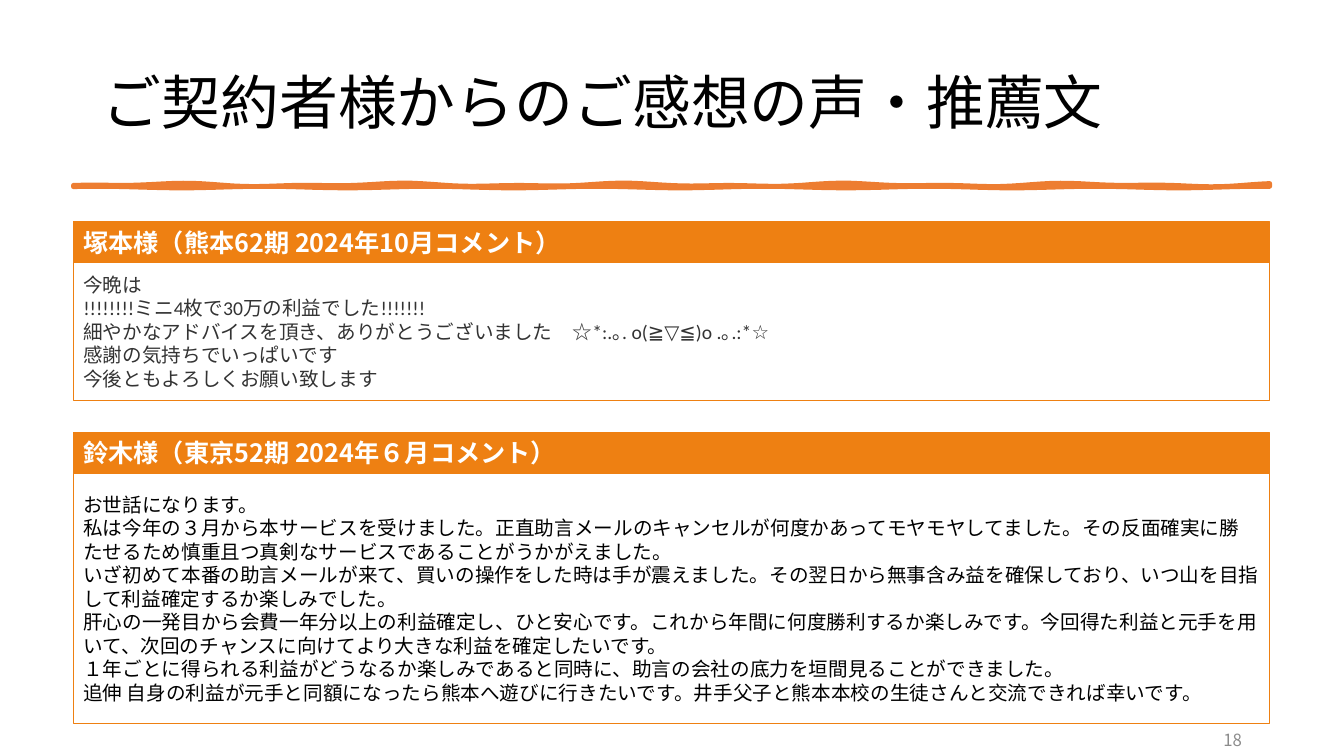
"""Build the slide of client comments and recommendations."""
import math

import pptx
import pptx.dml.color
import pptx.enum.shapes
import pptx.enum.text
import pptx.oxml
import pptx.oxml.ns
import pptx.util

Cm = pptx.util.Cm
Align = pptx.enum.text.PP_ALIGN
COLOURS = {"orange": "EE8012", "rule": "ED7D31", "black": "000000",
           "grey": "333333", "number": "8C8C8C", "white": "FFFFFF"}
JAPANESE = "Noto Sans CJK JP"
LEFT, WIDTH, HEADING_HEIGHT = 1.85, 30.15, 1.02
COMMENTS = [
    {"top": 10.9, "height": 6.32, "colour": "black", "font": JAPANESE,
     "heading": "鈴木様（東京52期 2024年６月コメント）",
     "paragraphs": [
         ["お世話になります。"],
         ["私は今年の３月から本サービスを受けました。正直助言メールのキャンセルが何度かあってモヤモヤしてました。"
          "その反面確実に勝たせるため慎重且つ真剣なサービスであることがうかがえました。"],
         ["いざ初めて本番の助言メールが来て、買いの操作をした時は手が震えました。"
          "その翌日から無事含み益を確保しており、いつ山を目指して利益確定するか楽しみでした。"],
         ["肝心の一発目から会費一年分以上の利益確定し、ひと安心です。これから年間に何度勝利するか楽しみです。"
          "今回得た利益と元手を用いて、次回のチャンスに向けてより大きな利益を確定したいです。"],
         ["１年ごとに得られる利益がどうなるか楽しみであると同時に、助言の会社の底力を垣間見ることができました。"],
         ["追伸 自身の利益が元手と同額になったら熊本へ遊びに行きたいです。"
          "井手父子と熊本本校の生徒さんと交流できれば幸いです。"]]},
    {"top": 5.59, "height": 3.48, "colour": "grey", "font": "Calibri",
     "heading": "塚本様（熊本62期 2024年10月コメント）",
     "paragraphs": [
         ["今晩は",
          "!!!!!!!!ミニ4枚で30万の利益でした!!!!!!!",
          "細やかなアドバイスを頂き、ありがとうございました　☆*:.｡. o(≧▽≦)o .｡.:*☆",
          "感謝の気持ちでいっぱいです",
          "今後ともよろしくお願い致します"]]},
]


def colour(name):
    """Return the named colour."""
    return pptx.dml.color.RGBColor.from_string(COLOURS[name])


def add_span(para, text, size, shade, font=JAPANESE, bold=False):
    """Add one formatted run to a paragraph."""
    span = para.add_run()
    span.text = text
    span.font.size = pptx.util.Pt(size)
    span.font.name = font
    span.font.bold = bold
    span.font.color.rgb = colour(shade)
    east_asian = pptx.oxml.parse_xml(
        f'<a:ea {pptx.oxml.ns.nsdecls("a")} typeface="{JAPANESE}"/>')
    span.font._element.find(pptx.oxml.ns.qn("a:latin")).addnext(east_asian)


def fill_frame(frame, paragraphs, size, shade, font=JAPANESE, bold=False, align=Align.LEFT):
    """Write paragraphs, each a list of lines, into a text frame."""
    frame.word_wrap = True
    frame.auto_size = pptx.enum.text.MSO_AUTO_SIZE.NONE
    frame.vertical_anchor = pptx.enum.text.MSO_ANCHOR.MIDDLE
    for index, lines in enumerate(paragraphs):
        para = frame.add_paragraph() if index else frame.paragraphs[0]
        para.alignment = align
        for position, line in enumerate(lines):
            if position:
                para.add_line_break()
            add_span(para, line, size, shade, font, bold)


def add_title(page, text):
    """Place and write the title."""
    title = page.shapes.title
    title.left, title.top, title.width, title.height = Cm(2.34), Cm(0.81), Cm(29.21), Cm(3.68)
    fill_frame(title.text_frame, [[text]], 42, "black")
    title.text_frame.paragraphs[0].line_spacing = 0.9


def add_wavy_rule(page):
    """Draw the hand-drawn rule under the title."""
    steps = 120
    across = [LEFT + WIDTH * step / steps for step in range(steps + 1)]
    upper = [(x, 4.66 + 0.03 * math.sin(1.1 * x) + 0.02 * math.sin(2.3 * x)) for x in across]
    lower = [(x, 4.72 + 0.02 * math.sin(1.5 * x + 1)) for x in reversed(across)]
    points = [(Cm(x), Cm(y)) for x, y in upper + lower]
    builder = page.shapes.build_freeform(*points[0])
    builder.add_line_segments(points[1:], close=True)
    rule = builder.convert_to_shape()
    rule.shadow.inherit = False
    rule.fill.solid()
    rule.fill.fore_color.rgb = colour("rule")
    rule.line.color.rgb = colour("rule")
    rule.line.width = pptx.util.Pt(3.25)


def add_panel(group, top, height, filled):
    """Add one orange-edged rectangle to a group."""
    box = group.shapes.add_shape(pptx.enum.shapes.MSO_SHAPE.RECTANGLE,
                                 Cm(LEFT), Cm(top), Cm(WIDTH), Cm(height))
    box.shadow.inherit = False
    box.line.color.rgb = colour("orange")
    box.line.width = pptx.util.Pt(1)
    if filled:
        box.fill.solid()
        box.fill.fore_color.rgb = colour("orange")
    else:
        box.fill.background()
    return box.text_frame


def add_comment(page, comment):
    """Add a heading bar with its comment below."""
    group = page.shapes.add_group_shape()
    heading = add_panel(group, comment["top"], HEADING_HEIGHT, True)
    fill_frame(heading, [[comment["heading"]]], 18, "white", bold=True)
    body = add_panel(group, comment["top"] + HEADING_HEIGHT, comment["height"], False)
    fill_frame(body, comment["paragraphs"], 14, comment["colour"], comment["font"])


def add_page_number(page, number):
    """Add the page number at the lower right."""
    box = page.shapes.add_textbox(Cm(23.93), Cm(18.14), Cm(7.62), Cm(1.02))
    fill_frame(box.text_frame, [[number]], 12, "number", align=Align.RIGHT)


def main():
    """Build and save the deck."""
    deck = pptx.Presentation()
    deck.slide_width, deck.slide_height = Cm(33.87), Cm(19.05)
    page = deck.slides.add_slide(deck.slide_layouts.get_by_name("Title Only"))
    add_title(page, "ご契約者様からのご感想の声・推薦文")
    add_wavy_rule(page)
    add_page_number(page, "18")
    for comment in COMMENTS:
        add_comment(page, comment)
    deck.save("out.pptx")


if __name__ == "__main__":
    main()
